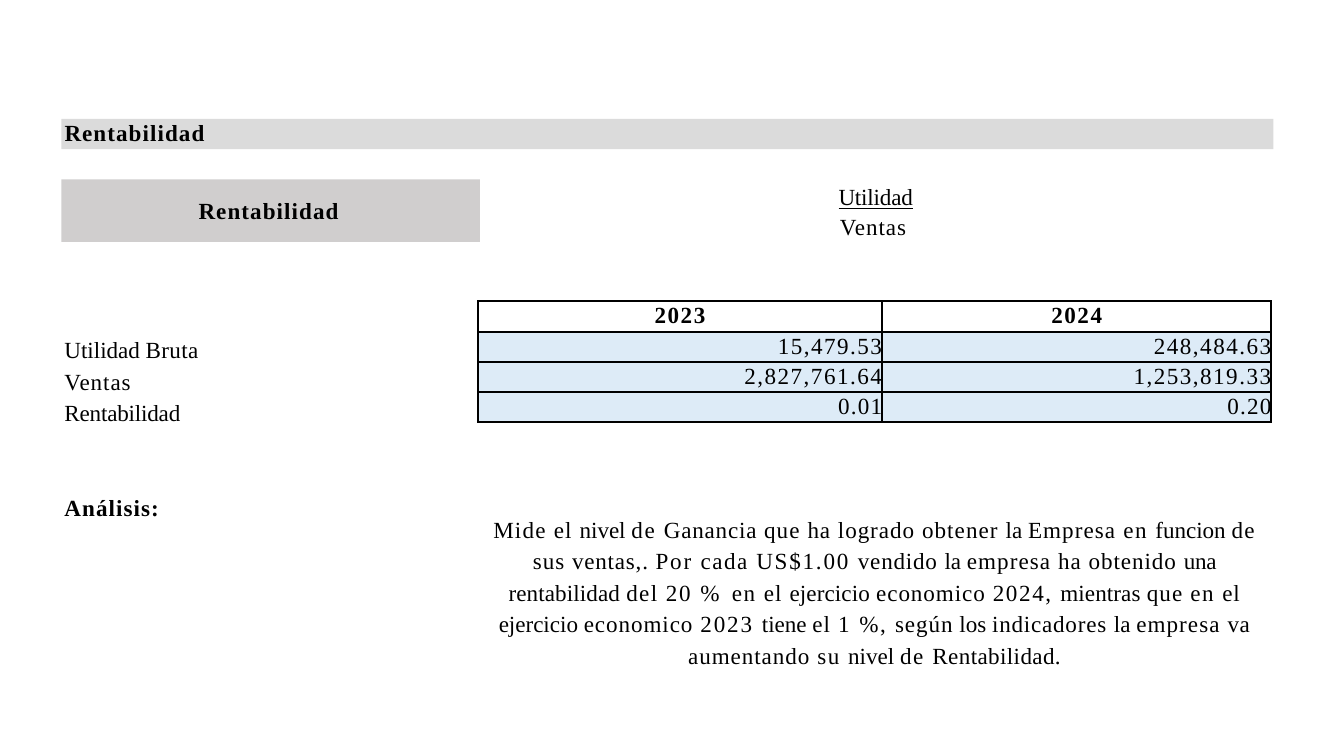
"""Build the slide on the profitability ratio for 2023 and 2024."""
from lxml import etree
from pptx import Presentation
from pptx import util as u
from pptx.dml.color import RGBColor
from pptx.enum import shapes, text
from pptx.oxml.ns import qn

PX = 9144
COLORS = {"ink": "000000", "band": "DBDBDB", "ratio": "D0CECE",
          "head": "FFFFFF", "figure": "DDEBF7"}
LEFT, CENTER, RIGHT = text.PP_ALIGN.LEFT, text.PP_ALIGN.CENTER, text.PP_ALIGN.RIGHT

deck = Presentation()
deck.slide_width, deck.slide_height = 1333 * PX, 750 * PX
slide = deck.slides.add_slide(deck.slide_layouts[6])


def write(paragraph, words, spacing=0, bold=False, underline=False, align=LEFT):
    paragraph.alignment = align
    run = paragraph.add_run()
    run.text = words
    run.font.name, run.font.size = "Times New Roman", u.Pt(16.5)
    run.font.bold, run.font.underline = bold, underline
    run.font.color.rgb = RGBColor.from_string(COLORS["ink"])
    run.font._element.set("spc", str(round(spacing * 100)))


def area(left, top, width, height, fill=None, inset=(1, 3)):
    place = [n * PX for n in (left, top, width, height)]
    if fill:
        shape = slide.shapes.add_shape(shapes.MSO_SHAPE.RECTANGLE, *place)
        shape.shadow.inherit = False
        shape.fill.solid()
        shape.fill.fore_color.rgb = RGBColor.from_string(COLORS[fill])
        shape.line.fill.background()
    else:
        shape = slide.shapes.add_textbox(*place)
    frame = shape.text_frame
    frame.word_wrap = True
    frame.vertical_anchor = text.MSO_ANCHOR.TOP
    frame.margin_left, frame.margin_top = (n * PX for n in inset)
    frame.margin_right = frame.margin_bottom = 0
    return frame


area(61, 178, 415, 62, "ratio")
write(area(472, 178, 792, 31).paragraphs[0], "Utilidad", -0.1, underline=True, align=CENTER)
write(area(832, 208, 74, 31).paragraphs[0], "Ventas", 0.7)

rows = [("2023", "2024"), ("15,479.53", "248,484.63"),
        ("2,827,761.64", "1,253,819.33"), ("0.01", "0.20")]
table = slide.shapes.add_table(4, 2, 474 * PX, 299 * PX, 787 * PX, 120 * PX).table
table.first_row = table.horz_banding = False
for column, width in zip(table.columns, (401, 386)):
    column.width = width * PX
for r, values in enumerate(rows):
    table.rows[r].height = 30 * PX
    for c, value in enumerate(values):
        cell = table.cell(r, c)
        cell.margin_left = cell.margin_right = cell.margin_bottom = 0
        cell.margin_top = 2 * PX
        cell.fill.solid()
        cell.fill.fore_color.rgb = RGBColor.from_string(COLORS["figure" if r else "head"])
        write(cell.text_frame.paragraphs[0], value, 0.9 if r == 3 else 1.1,
              bold=r == 0, align=RIGHT if r else CENTER)
        for position, side in enumerate(("a:lnL", "a:lnR", "a:lnT", "a:lnB")):
            border = etree.Element(qn(side), w=str(u.Pt(1.5)))
            paint = etree.SubElement(border, qn("a:solidFill"))
            etree.SubElement(paint, qn("a:srgbClr"), val=COLORS["ink"])
            cell._tc.get_or_add_tcPr().insert(position, border)

labels = area(63, 327, 144, 185, inset=(1, 2))
row_labels = [[("Utilidad ", 0), ("Bruta", 0.3)], [("Ventas", 0.7)], [("Rentabilidad", -0.1)]]
for i, label in enumerate(row_labels):
    paragraph = labels.add_paragraph() if i else labels.paragraphs[0]
    paragraph.line_spacing = 1.14
    for words, spacing in label:
        write(paragraph, words, spacing)
heading = labels.add_paragraph()
heading.space_before = u.Pt(48)
write(heading, "Análisis:", 0.8, bold=True)

write(area(61, 118, 1202, 30, "band", (3, 0)).paragraphs[0], "Rentabilidad", 0.8, bold=True)
write(area(196, 192, 147, 31).paragraphs[0], "Rentabilidad", 0.8, bold=True)

analysis = [
    ("Mide ", 0.9), ("el ", 0.8), ("nivel ", 0), ("de ", 1.2), ("Ganancia ", 0.6),
    ("que ", 0.8), ("ha logrado ", 0.7), ("obtener ", 0.8), ("la ", 0), ("Empresa ", 0.8),
    ("en ", 1.1), ("funcion ", 0), ("de ", 1), ("sus ", 0.7), ("ventas,. ", 0.6),
    ("Por ", 1.3), ("cada ", 1.1), ("US$1.00 ", 1.3), ("vendido ", 0.6), ("la ", 0),
    ("empresa ", 0.8), ("ha obtenido ", 0.7), ("una ", -0.2), ("rentabilidad ", 0.1),
    ("del ", 1), ("20 ", 1.4), ("% ", 2.3), ("en ", 1.1), ("el ", 0.8), ("ejercicio ", 0.1),
    ("economico ", 0.7), ("2024, ", 1.2), ("mientras ", 0.1), ("que ", 0.8), ("en ", 1.1),
    ("el ", 0.6), ("ejercicio ", 0), ("economico ", 0.7), ("2023 ", 1.4), ("tiene ", 0),
    ("el ", 0.8), ("1 ", 1.4), ("%, ", 1.2), ("según", 0.7), (" los ", 0),
    ("indicadores ", 0.6), ("la ", 0), ("empresa ", 0.8), ("va ", 0.4), ("aumentando ", 0.7),
    ("su ", 1.1), ("nivel ", 0), ("de ", 1.2), ("Rentabilidad.", 0.3)]
reading = area(484, 505, 766, 155, inset=(1, 2)).paragraphs[0]
reading.line_spacing = 1.14
for words, spacing in analysis:
    write(reading, words, spacing, align=CENTER)

deck.save("out.pptx")
